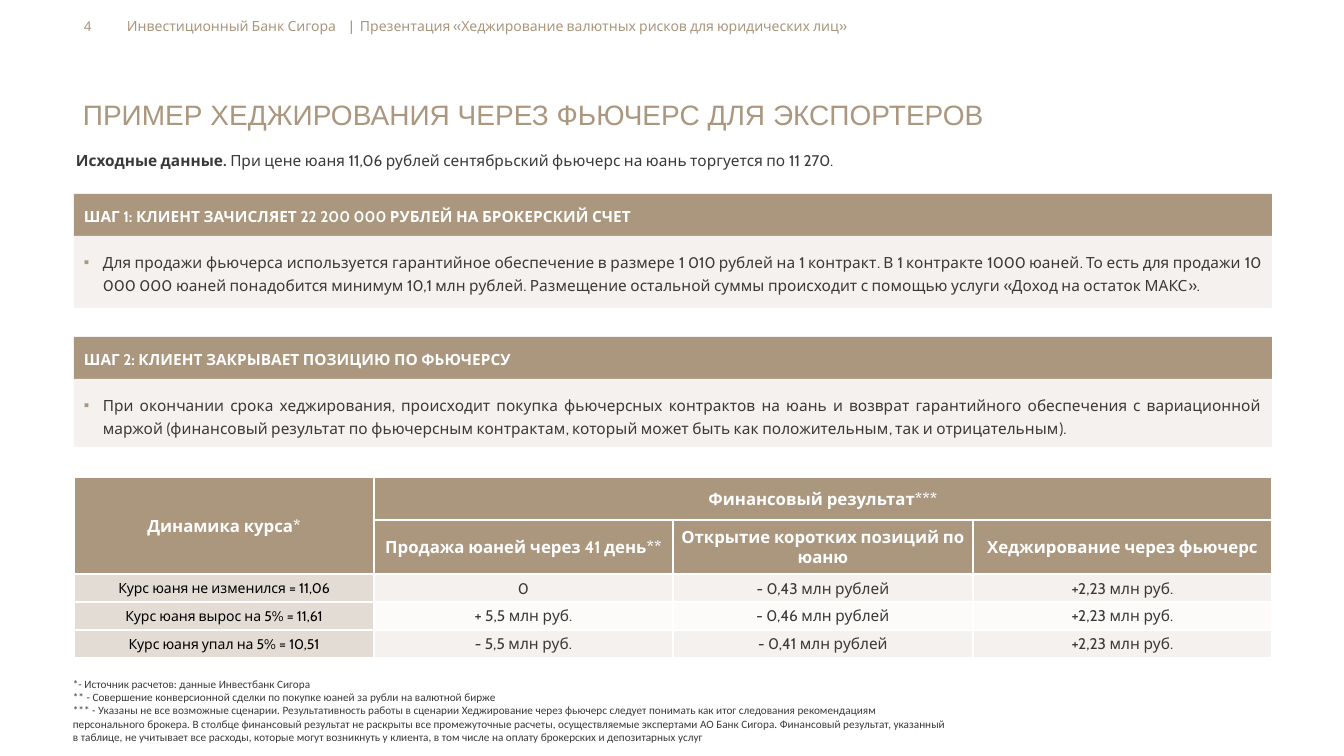
from lxml.etree import SubElement
from pptx import Presentation
from pptx.dml.color import RGBColor
from pptx.enum.shapes import MSO_SHAPE
from pptx.enum.text import MSO_ANCHOR, PP_ALIGN
from pptx.oxml.ns import qn
from pptx.util import Pt

SCALE = 914400 / 100.8
COLORS = {
    "sand": "AB967E",
    "pale": "F4F1EF",
    "light": "FCFBFA",
    "label": "E2DCD5",
    "ink": "3B3838",
    "black": "000000",
    "white": "FFFFFF",
}
LEFT, WIDTH = 74, 1198
BAND_HEIGHT = 42

STEPS = [
    (194, 72, "ШАГ 1: КЛИЕНТ ЗАЧИСЛЯЕТ 22 200 000 РУБЛЕЙ НА БРОКЕРСКИЙ СЧЕТ",
     "Для продажи фьючерса используется гарантийное обеспечение в размере 1 010 рублей на 1 контракт. "
     "В 1 контракте 1000 юаней. То есть для продажи 10 000 000 юаней понадобится минимум 10,1 млн рублей. "
     "Размещение остальной суммы происходит с помощью услуги «Доход на остаток МАКС»."),
    (337, 68, "ШАГ 2: КЛИЕНТ ЗАКРЫВАЕТ ПОЗИЦИЮ ПО ФЬЮЧЕРСУ",
     "При окончании срока хеджирования, происходит покупка фьючерсных контрактов на юань и возврат "
     "гарантийного обеспечения с вариационной маржой (финансовый результат по фьючерсным контрактам, "
     "который может быть как положительным, так и отрицательным)."),
]
RESULTS = [
    ["Динамика курса*", "Финансовый результат***", "", ""],
    ["", "Продажа юаней через 41 день**", "Открытие коротких позиций по юаню",
     "Хеджирование через фьючерс"],
    ["Курс юаня не изменился = 11,06", "0", "- 0,43 млн рублей", "+2,23 млн руб."],
    ["Курс юаня вырос на 5% = 11,61", "+ 5,5 млн руб.", "- 0,46 млн рублей", "+2,23 млн руб."],
    ["Курс юаня упал на 5% = 10,51", "- 5,5 млн руб.", "- 0,41 млн рублей", "+2,23 млн руб."],
]
FOOTNOTES = [
    "*- Источник расчетов: данные Инвестбанк Сигора",
    "** - Совершение конверсионной сделки по покупке юаней за рубли на валютной бирже",
    "*** - Указаны не все возможные сценарии. Результативность работы в сценарии Хеджирование через "
    "фьючерс следует понимать как итог следования рекомендациям персонального брокера. В столбце "
    "финансовый результат не раскрыты все промежуточные расчеты, осуществляемые экспертами АО Банк "
    "Сигора. Финансовый результат, указанный в таблице, не учитывает все расходы, которые могут "
    "возникнуть у клиента, в том числе на оплату брокерских и депозитарных услуг",
]


def px(length):
    return round(length * SCALE)


def rgb(name):
    return RGBColor.from_string(COLORS[name])


def write(para, text, size=11, color="ink", font="Cabin", bold=False):
    span = para.add_run()
    span.text = text
    span.font.size = Pt(size)
    span.font.name = font
    span.font.bold = bold
    span.font.color.rgb = rgb(color)


class Page:
    def __init__(self, deck):
        self.slide = deck.slides.add_slide(deck.slide_layouts[6])

    def rectangle(self, left, top, width, height, color):
        box = self.slide.shapes.add_shape(
            MSO_SHAPE.RECTANGLE, px(left), px(top), px(width), px(height))
        box.shadow.inherit = False
        box.fill.solid()
        box.fill.fore_color.rgb = rgb(color)
        box.line.fill.background()

    def text(self, left, top, width, height, anchor=MSO_ANCHOR.TOP):
        box = self.slide.shapes.add_textbox(px(left), px(top), px(width), px(height))
        box.text_frame.word_wrap = True
        box.text_frame.vertical_anchor = anchor
        return box.text_frame

    def bullet(self, para, indent):
        properties = para._p.get_or_add_pPr()
        properties.set("marL", str(px(indent)))
        properties.set("indent", str(-px(indent)))
        tint = SubElement(properties, qn("a:buClr"))
        SubElement(tint, qn("a:srgbClr"), val=COLORS["sand"])
        SubElement(properties, qn("a:buFont"), typeface="Arial")
        SubElement(properties, qn("a:buChar"), char="▪")

    def tabs(self, para, stops):
        stop_list = SubElement(para._p.get_or_add_pPr(), qn("a:tabLst"))
        for stop in stops:
            SubElement(stop_list, qn("a:tab"), pos=str(px(stop)), algn="l")

    def step(self, top, height, title, detail):
        body_top = top + BAND_HEIGHT
        self.rectangle(LEFT, top, WIDTH, BAND_HEIGHT, "sand")
        self.rectangle(LEFT, body_top, WIDTH, height, "pale")
        heading = self.text(LEFT, top + 4, WIDTH, 30).paragraphs[0]
        heading.line_spacing = Pt(16.4)
        write(heading, title, color="white", bold=True)
        para = self.text(LEFT, body_top + 8, WIDTH, height - 8).paragraphs[0]
        self.bullet(para, 19)
        para.alignment = PP_ALIGN.JUSTIFY
        para.line_spacing = Pt(16.4)
        write(para, detail)

    def border(self, cell, **widths):
        properties = cell._tc.get_or_add_tcPr()
        for side in "LRTB":
            line = SubElement(properties, qn(f"a:ln{side}"), w=str(Pt(widths.get(side, 1))))
            fill = SubElement(line, qn("a:solidFill"))
            SubElement(fill, qn("a:srgbClr"), val=COLORS["white"])

    def cell(self, cell, text, fill, **style):
        cell.margin_left = cell.margin_right = cell.margin_top = px(1)
        cell.margin_bottom = 0
        cell.vertical_anchor = MSO_ANCHOR.MIDDLE
        cell.fill.solid()
        cell.fill.fore_color.rgb = rgb(fill)
        para = cell.text_frame.paragraphs[0]
        para.alignment = PP_ALIGN.CENTER
        if text:
            write(para, text, **style)

    def table(self, left, top, columns, heights, rows):
        grid = self.slide.shapes.add_table(
            len(rows), len(columns), px(left), px(top), px(sum(columns)), px(sum(heights))).table
        grid.first_row = grid.horz_banding = False
        for column, width in zip(grid.columns, columns):
            column.width = px(width)
        for row, height in zip(grid.rows, heights):
            row.height = px(height)
        for r, values in enumerate(rows):
            for c, value in enumerate(values):
                cell = grid.cell(r, c)
                seam = {0: {"B": 1.5}, 1: {"T": 1.5}}.get(r, {}) if c else {}
                self.border(cell, **seam)
                if r < 2:
                    self.cell(cell, value, "sand", size=12, color="white", bold=True)
                elif c == 0:
                    self.cell(cell, value, "label", size=10, color="black")
                else:
                    self.cell(cell, value, "light" if r % 2 else "pale")
        grid.cell(0, 0).merge(grid.cell(1, 0))
        grid.cell(0, 1).merge(grid.cell(0, 3))


def main():
    deck = Presentation()
    deck.slide_width, deck.slide_height = px(1344), px(756)
    page = Page(deck)

    title = page.text(73, 93, 1196, 54).paragraphs[0]
    write(title, "ПРИМЕР ХЕДЖИРОВАНИЯ ЧЕРЕЗ ФЬЮЧЕРС ДЛЯ ЭКСПОРТЕРОВ",
          size=20, color="sand", font="Arial")

    header = page.text(LEFT, 6, 880, 40, MSO_ANCHOR.MIDDLE).paragraphs[0]
    page.tabs(header, [43, 266, 276])
    write(header, "4", size=10, color="sand", font="Arial")
    write(header, "\tИнвестиционный Банк Сигора\t|\tПрезентация «Хеджирование валютных рисков "
          "для юридических лиц»", size=10, color="sand")

    intro = page.text(66, 148, 1196, 42).paragraphs[0]
    intro.line_spacing = 0.9
    write(intro, "Исходные данные. ", bold=True)
    write(intro, "При цене юаня 11,06 рублей сентябрьский фьючерс на юань торгуется по 11 270.")

    for step in STEPS:
        page.step(*step)
    page.table(LEFT, 477, [300, 299, 300, 299], [43, 54, 28, 28, 28], RESULTS)

    notes = page.text(63, 672, 896, 80)
    for index, note in enumerate(FOOTNOTES):
        para = notes.add_paragraph() if index else notes.paragraphs[0]
        write(para, note, size=8, font="Calibri")

    deck.save("out.pptx")


if __name__ == "__main__":
    main()
